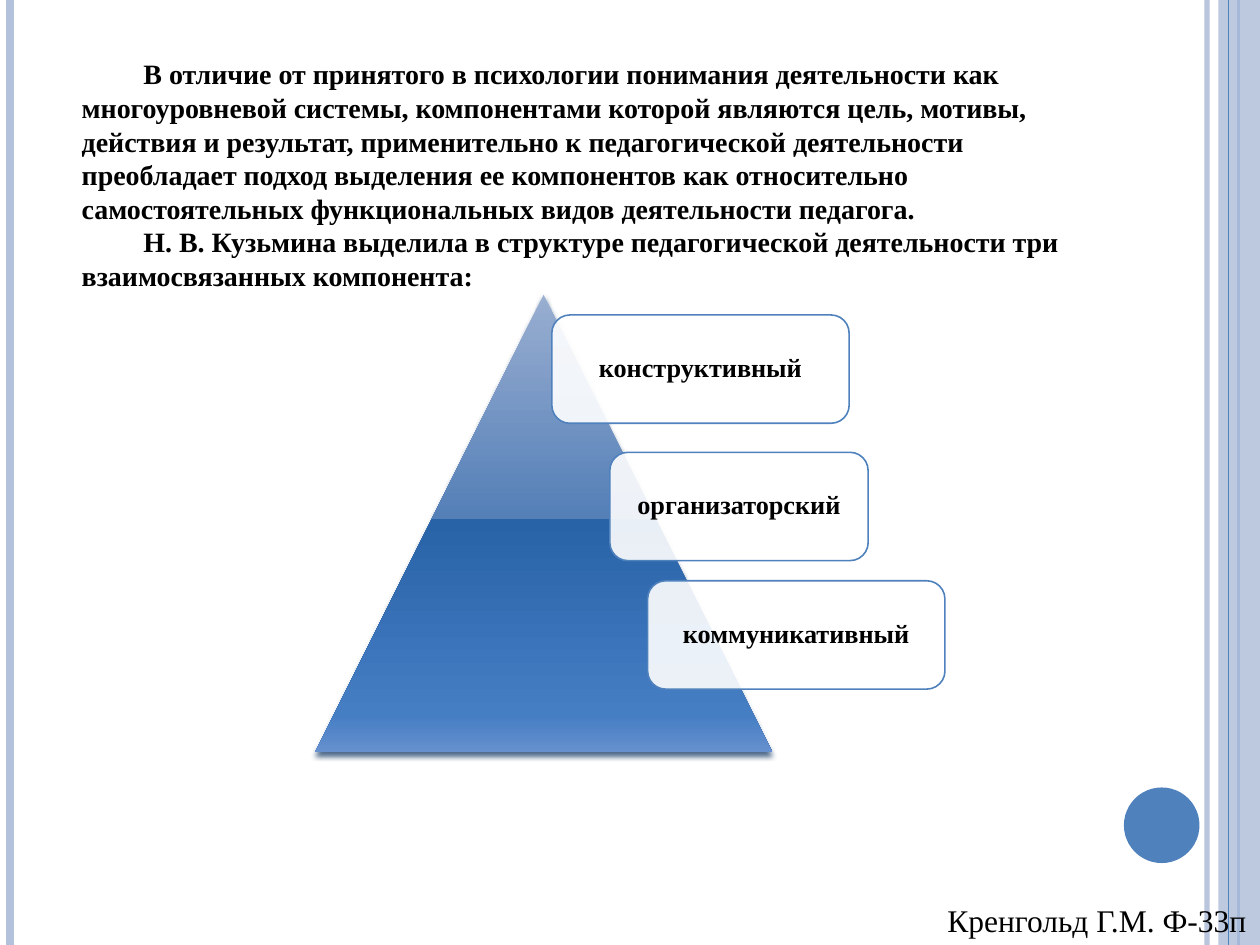
from dataclasses import dataclass

from pptx import Presentation
from pptx.dml.color import RGBColor
from pptx.enum.shapes import MSO_CONNECTOR, MSO_SHAPE
from pptx.enum.text import MSO_ANCHOR, MSO_AUTO_SIZE, PP_ALIGN
from pptx.oxml import parse_xml
from pptx.oxml.ns import nsdecls, qn
from pptx.shapes.autoshape import Shape
from pptx.slide import Slide
from pptx.util import Inches, Pt


@dataclass(frozen=True)
class Theme:
    """Colours and type sizes of the slide."""
    font: str = "Times New Roman"
    ink: str = "000000"
    paper: str = "FFFFFF"
    accent: str = "4F81BD"
    pale: str = "B3C1DB"
    shadow: str = "315075"
    gradient: tuple = ((0, "99AED1"), (49, "547FB7"), (49, "2862A7"), (92, "467EC4"), (100, "6690CE"))
    signature_size: float = 18
    body_size: float = 16
    label_size: float = 15


@dataclass(frozen=True)
class Stripe:
    """A vertical line across the full slide height."""
    x: float
    color: str
    width: float
    opacity: int = 100


@dataclass(frozen=True)
class Component:
    """A labelled card beside the pyramid."""
    label: str
    left: float
    top: float
    width: float


THEME = Theme()
SLIDE_WIDTH, SLIDE_HEIGHT = 10, 7.5
CARD_HEIGHT = 0.86
BACK_STRIPES = (
    Stripe(9.58, THEME.pale, 3, 93),
    Stripe(0.08, THEME.pale, 4.5),
    Stripe(9.83, THEME.accent, 1.5),
)
FRONT_STRIPE = Stripe(9.75, THEME.accent, 0.75)
COMPONENTS = (
    Component("конструктивный", 4.38, 2.5, 2.36),
    Component("организаторский", 4.84, 3.59, 2.05),
    Component("коммуникативный", 5.14, 4.61, 2.36),
)
PARAGRAPHS = (
    "В отличие от принятого в психологии понимания деятельности как многоуровневой системы, "
    "компонентами которой являются цель, мотивы, действия и результат, применительно к "
    "педагогической деятельности преобладает подход выделения ее компонентов как относительно "
    "самостоятельных функциональных видов деятельности педагога.",
    "Н. В. Кузьмина выделила в структуре педагогической деятельности три взаимосвязанных компонента:",
)


def apply_format(target: object, values: dict) -> None:
    """Set each named attribute on the target."""
    for name, value in values.items():
        setattr(target, name, value)


def set_opacity(fill_parent, percent: int) -> None:
    """Make the solid fill directly under an element partly transparent."""
    color = fill_parent.find(qn("a:solidFill")).find(qn("a:srgbClr"))
    color.append(parse_xml(f'<a:alpha {nsdecls("a")} val="{percent * 1000}"/>'))


def add_stripe(page: Slide, stripe: Stripe) -> None:
    """Draw a decorative vertical line."""
    x = Inches(stripe.x)
    line = page.shapes.add_connector(MSO_CONNECTOR.STRAIGHT, x, 0, x, Inches(SLIDE_HEIGHT))
    line.line.color.rgb = RGBColor.from_string(stripe.color)
    line.line.width = Pt(stripe.width)
    properties = line._element.spPr
    if stripe.opacity < 100:
        set_opacity(properties.find(qn("a:ln")), stripe.opacity)
    properties.append(parse_xml(f'<a:effectLst {nsdecls("a")}/>'))


def add_figure(page: Slide, kind: MSO_SHAPE, bounds: tuple, color: str, opacity: int = 100) -> Shape:
    """Draw a filled preset shape without outline or shadow."""
    figure = page.shapes.add_shape(kind, *map(Inches, bounds))
    figure.shadow.inherit = False
    figure.fill.solid()
    figure.fill.fore_color.rgb = RGBColor.from_string(color)
    figure.line.fill.background()
    if opacity < 100:
        set_opacity(figure._element.spPr, opacity)
    return figure


def write_text(box: Shape, texts: tuple, size: float, bold: bool, frame_format: dict,
               paragraph_format: dict, indent: float = 0) -> None:
    """Fill a shape with uniformly formatted paragraphs."""
    frame = box.text_frame
    apply_format(frame, frame_format)
    for index, text in enumerate(texts):
        para = frame.add_paragraph() if index else frame.paragraphs[0]
        if indent:
            para._p.get_or_add_pPr().set("indent", str(Inches(indent)))
        apply_format(para, paragraph_format)
        span = para.add_run()
        span.text = text
        apply_format(span.font, {"name": THEME.font, "size": Pt(size), "bold": bold})
        span.font.color.rgb = RGBColor.from_string(THEME.ink)


def add_pyramid(page: Slide) -> None:
    """Draw the gradient triangle with its soft shadow."""
    pyramid = add_figure(page, MSO_SHAPE.ISOSCELES_TRIANGLE, (2.5, 2.34, 3.63, 3.63), THEME.accent)
    stops = "".join(
        f'<a:gs pos="{position * 1000}"><a:srgbClr val="{color}"/></a:gs>'
        for position, color in THEME.gradient
    )
    properties = pyramid._element.spPr
    properties.replace(properties.find(qn("a:solidFill")), parse_xml(
        f'<a:gradFill {nsdecls("a")} rotWithShape="1"><a:gsLst>{stops}</a:gsLst>'
        '<a:lin ang="5400000" scaled="0"/></a:gradFill>'))
    properties.find(qn("a:effectLst")).append(parse_xml(
        f'<a:outerShdw {nsdecls("a")} blurRad="{Pt(3.1)}" dist="{Pt(2)}" dir="5400000" '
        f'rotWithShape="0"><a:srgbClr val="{THEME.shadow}"><a:alpha val="83000"/>'
        '</a:srgbClr></a:outerShdw>'))


def add_component(page: Slide, component: Component) -> None:
    """Draw a translucent card with a centred label."""
    bounds = (component.left, component.top, component.width, CARD_HEIGHT)
    card = add_figure(page, MSO_SHAPE.ROUNDED_RECTANGLE, bounds, THEME.paper, 90)
    card.line.color.rgb = RGBColor.from_string(THEME.accent)
    card.line.width = Pt(0.9)
    sides = ("left", "top", "right", "bottom")
    frame_format = {f"margin_{side}": Inches(0.06) for side in sides}
    frame_format |= {"word_wrap": True, "vertical_anchor": MSO_ANCHOR.MIDDLE}
    write_text(card, (component.label,), THEME.label_size, True, frame_format,
               {"alignment": PP_ALIGN.CENTER, "line_spacing": 0.9})


def main() -> None:
    """Build and save the slide."""
    deck = Presentation()
    deck.slide_width, deck.slide_height = Inches(SLIDE_WIDTH), Inches(SLIDE_HEIGHT)
    page = deck.slides.add_slide(deck.slide_layouts[6])
    for stripe in BACK_STRIPES:
        add_stripe(page, stripe)
    add_figure(page, MSO_SHAPE.RECTANGLE, (9.67, 0, 0.33, SLIDE_HEIGHT), THEME.pale, 87)
    add_stripe(page, FRONT_STRIPE)
    add_figure(page, MSO_SHAPE.OVAL, (8.92, 6.25, 0.6, 0.6), THEME.accent)

    fit = {"auto_size": MSO_AUTO_SIZE.SHAPE_TO_FIT_TEXT}
    left = {"alignment": PP_ALIGN.LEFT}
    signature = page.shapes.add_textbox(*map(Inches, (7.42, 7.1, 2.58, 0.4)))
    write_text(signature, ("Кренгольд Г.М. Ф-33п",), THEME.signature_size, False,
               fit | {"word_wrap": False}, left)
    body = page.shapes.add_textbox(*map(Inches, (0.55, 0.39, 8.28, 1.99)))
    write_text(body, PARAGRAPHS, THEME.body_size, True,
               fit | {"word_wrap": True, "vertical_anchor": MSO_ANCHOR.MIDDLE}, left, 0.49)

    add_pyramid(page)
    for component in COMPONENTS:
        add_component(page, component)
    deck.save("out.pptx")


if __name__ == "__main__":
    main()
